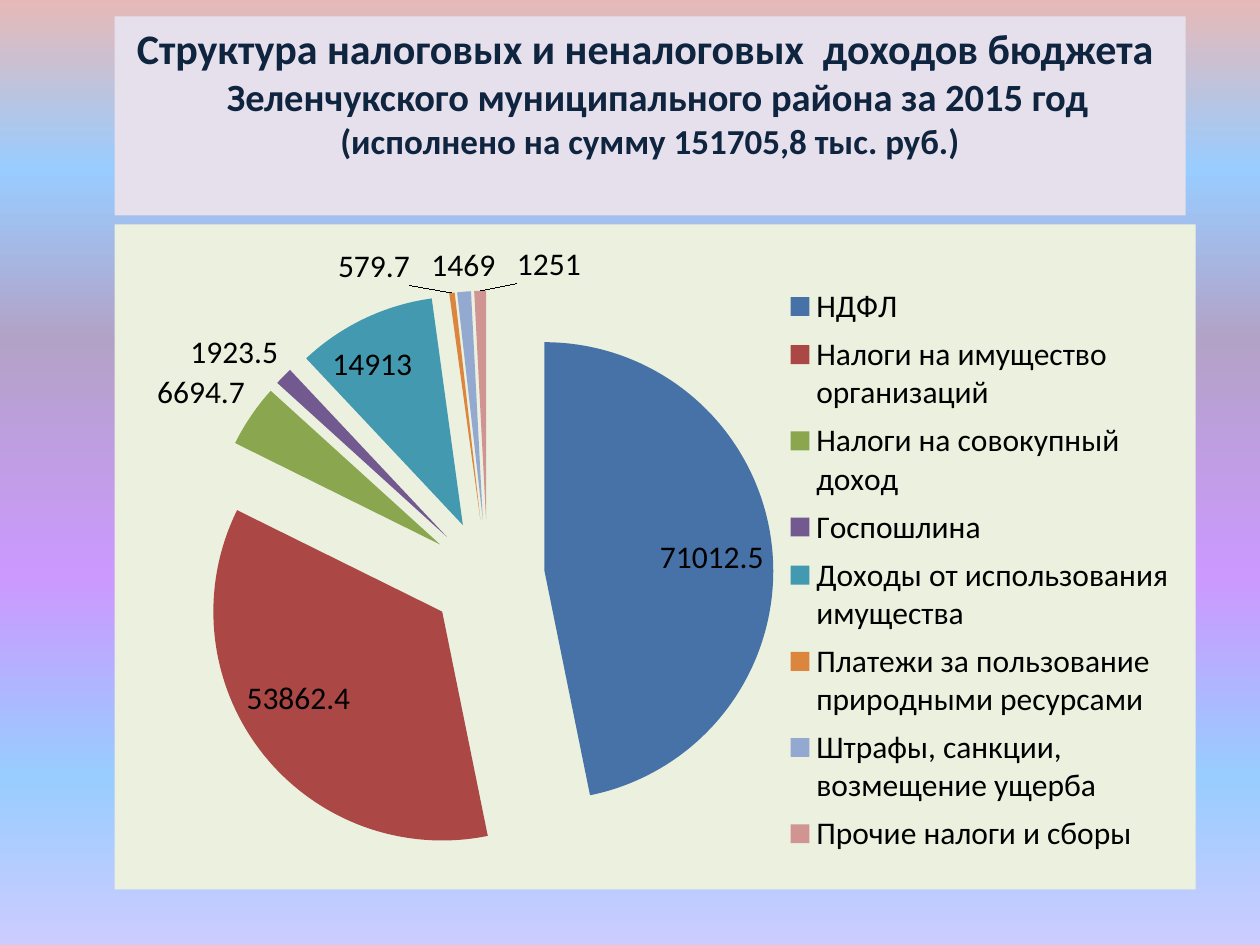
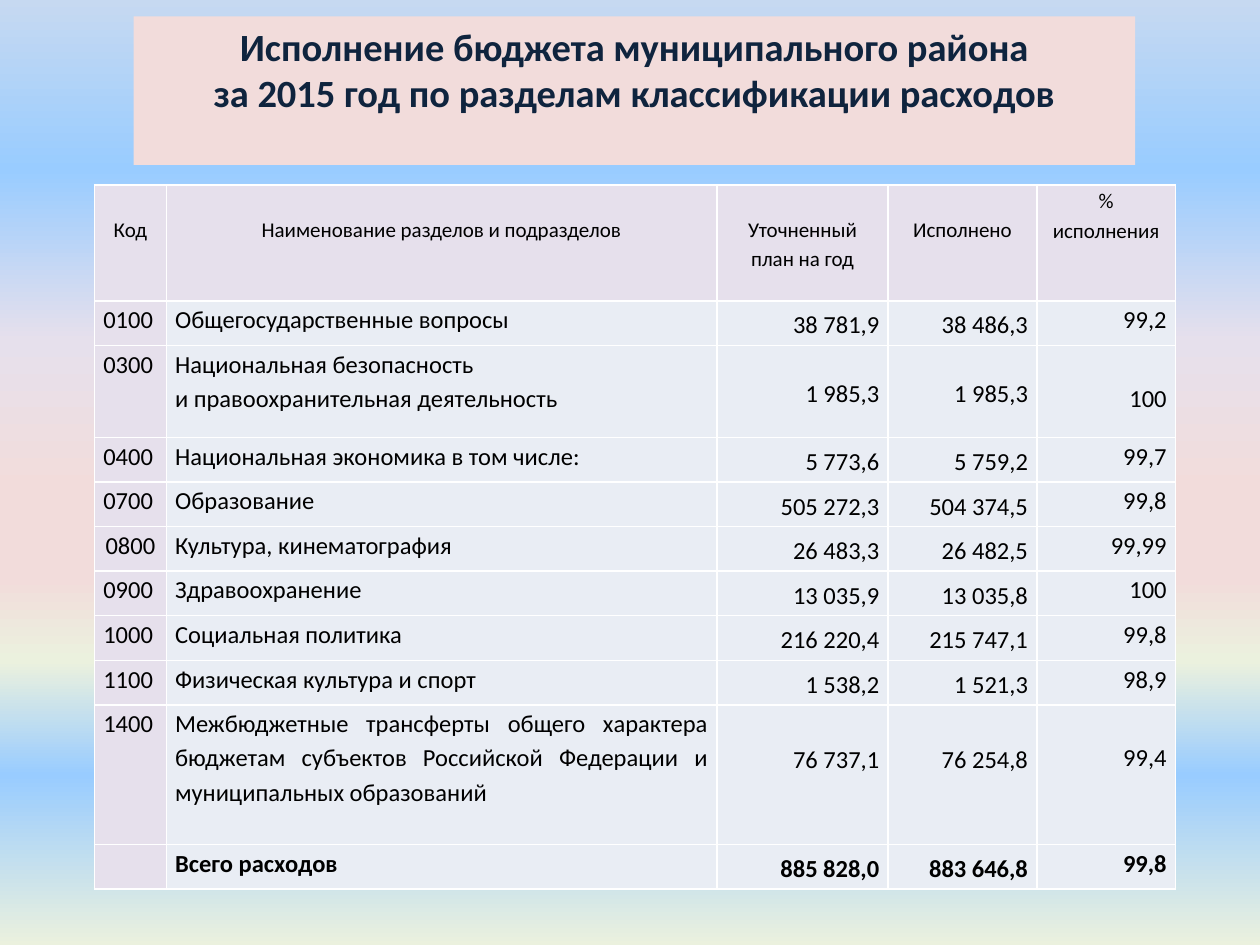
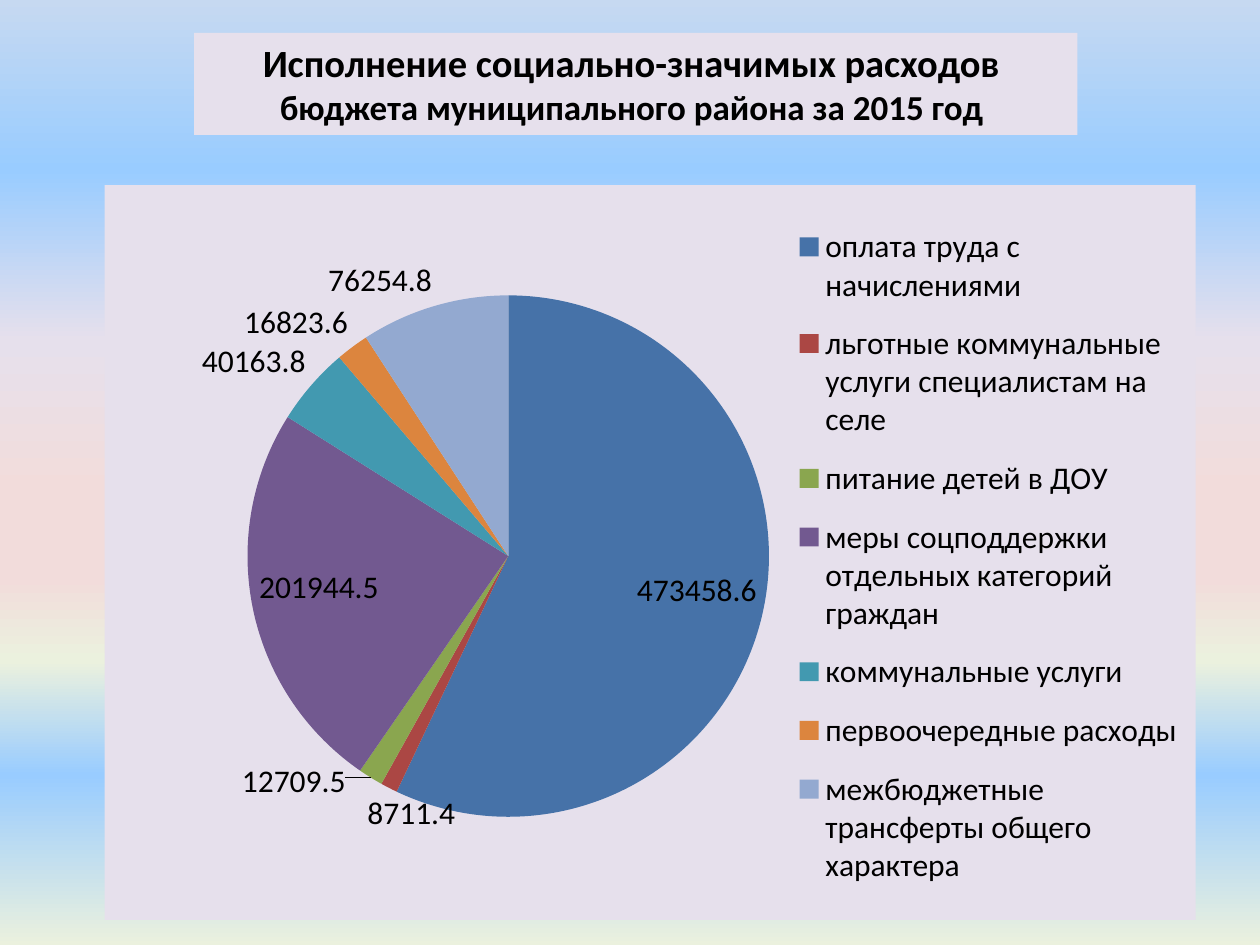
from lxml.etree import SubElement
from pptx import Presentation
from pptx.chart.data import CategoryChartData
from pptx.dml.color import RGBColor
from pptx.enum.chart import XL_CHART_TYPE, XL_LABEL_POSITION, XL_LEGEND_POSITION
from pptx.enum.shapes import MSO_SHAPE
from pptx.enum.text import MSO_ANCHOR, PP_ALIGN
from pptx.oxml import parse_xml
from pptx.oxml.ns import nsdecls, qn
from pptx.util import Emu, Inches, Pt

FONT = "Calibri"
BLACK = RGBColor(0x00, 0x00, 0x00)
WHITE = RGBColor(0xFF, 0xFF, 0xFF)
NAVY = RGBColor(0x0F, 0x24, 0x3E)
LILAC = RGBColor(0xE6, 0xE0, 0xEC)
PINK = RGBColor(0xF2, 0xDC, 0xDB)
GREEN = RGBColor(0xEB, 0xF1, 0xDE)
CELL = RGBColor(0xE9, 0xED, 0xF4)
SKY = RGBColor(0x99, 0xCC, 0xFF)
SLICES = [
    RGBColor(0x46, 0x72, 0xA8), RGBColor(0xAB, 0x47, 0x44),
    RGBColor(0x8A, 0xA6, 0x4F), RGBColor(0x72, 0x59, 0x90),
    RGBColor(0x42, 0x99, 0xB0), RGBColor(0xDC, 0x85, 0x3E),
    RGBColor(0x93, 0xA9, 0xD0), RGBColor(0xD0, 0x94, 0x93),
]

# Backgrounds: position in percent, colour
VIVID = [(0, RGBColor(0xE6, 0xB9, 0xB8)), (18, SKY), (36, RGBColor(0xB3, 0xA2, 0xC7)),
         (61, RGBColor(0xCC, 0x99, 0xFF)), (82, SKY), (100, RGBColor(0xCC, 0xCC, 0xFF))]
PASTEL = [(0, RGBColor(0xC6, 0xD9, 0xF1)), (18, SKY), (36, LILAC), (52, PINK),
          (61, PINK), (70, GREEN), (82, SKY), (100, GREEN)]

INCOME = [
    ("НДФЛ", 71012.5),
    ("Налоги на имущество организаций", 53862.4),
    ("Налоги на совокупный доход", 6694.7),
    ("Госпошлина", 1923.5),
    ("Доходы от использования имущества", 14913),
    ("Платежи за пользование природными ресурсами", 579.7),
    ("Штрафы, санкции, возмещение ущерба", 1469),
    ("Прочие налоги и сборы", 1251),
]
SOCIAL = [
    ("оплата труда с начислениями", 473458.6),
    ("льготные коммунальные услуги специалистам на селе", 8711.4),
    ("питание детей в ДОУ", 12709.5),
    ("меры соцподдержки отдельных категорий граждан", 201944.5),
    ("коммунальные услуги", 40163.8),
    ("первоочередные расходы", 16823.6),
    ("межбюджетные трансферты общего характера", 76254.8),
]
EXPENSES = [
    ("Код", "Наименование разделов и подразделов", "Уточненный план на год",
     "Исполнено", "%\nисполнения"),
    ("0100", "Общегосударственные вопросы", "38 781,9", "38 486,3", "99,2"),
    ("0300", "Национальная безопасность\nи правоохранительная деятельность",
     "1 985,3", "1 985,3", "100"),
    ("0400", "Национальная экономика в том числе:", "5 773,6", "5 759,2", "99,7"),
    ("0700", "Образование", "505 272,3", "504 374,5", "99,8"),
    ("0800", "Культура, кинематография", "26 483,3", "26 482,5", "99,99"),
    ("0900", "Здравоохранение", "13 035,9", "13 035,8", "100"),
    ("1000", "Социальная политика", "216 220,4", "215 747,1", "99,8"),
    ("1100", "Физическая культура и спорт", "1 538,2", "1 521,3", "98,9"),
    ("1400", "Межбюджетные трансферты общего характера бюджетам субъектов "
     "Российской Федерации и муниципальных образований", "76 737,1", "76 254,8", "99,4"),
    ("", "Всего расходов", "885 828,0", "883 646,8", "99,8"),
]
COL_WEIGHTS = [57, 437, 136, 118, 110]
ROW_WEIGHTS = [92, 35.4, 73] + [35.4] * 6 + [111, 35.4]
COL_ALIGN = [PP_ALIGN.LEFT, PP_ALIGN.JUSTIFY] + [PP_ALIGN.RIGHT] * 3
# Cells whose text is pushed off by one line: (row, column) -> margin
LINE_MARGINS = {
    **{(0, c): {"margin_bottom": Inches(0.23)} for c in (0, 1, 3)},
    **{(9, c): {"margin_bottom": Inches(0.27)} for c in (2, 3)},
    **{(r, 4): {"margin_top": Inches(0.27)} for r in (2, 9)},
}


def set_all(obj, **values):
    for name, value in values.items():
        setattr(obj, name, value)


def set_font(font, size, color=BLACK, bold=False):
    set_all(font, name=FONT, size=Pt(size), bold=bold)
    font.color.rgb = color


def add_slide(prs, stops):
    s = prs.slides.add_slide(prs.slide_layouts[6])
    fill = s.background.fill
    fill.gradient()
    grad = s.background._cSld.find(".//" + qn("a:gradFill"))
    for child in list(grad):
        grad.remove(child)
    gs_list = SubElement(grad, qn("a:gsLst"))
    for pos, color in stops:
        gs = SubElement(gs_list, qn("a:gs"), pos=str(pos * 1000))
        SubElement(gs, qn("a:srgbClr"), val=str(color))
    SubElement(grad, qn("a:lin"), ang="5400000", scaled="0")
    return s


def percent_box(prs, left, top, width, height):
    w, h = prs.slide_width / 100, prs.slide_height / 100
    return [Emu(round(v)) for v in (left * w, top * h, width * w, height * h)]


def add_title(s, box, fill, color, lines):
    """Each line is (text, size, left indent in inches)."""
    sp = s.shapes.add_shape(MSO_SHAPE.RECTANGLE, *box)
    sp.shadow.inherit = False
    sp.fill.solid()
    sp.fill.fore_color.rgb = fill
    sp.line.fill.background()
    tf = sp.text_frame
    set_all(tf, word_wrap=True, vertical_anchor=MSO_ANCHOR.TOP)
    for i, (text, size, indent) in enumerate(lines):
        p = tf.add_paragraph() if i else tf.paragraphs[0]
        p.alignment = PP_ALIGN.CENTER
        if indent:
            p._p.get_or_add_pPr().set("marL", str(Inches(indent)))
        r = p.add_run()
        r.text = text
        set_font(r.font, size, color, bold=True)


def manual_layout(x, y, w, h, inner=False):
    target = '<c:layoutTarget val="inner"/>' if inner else ""
    return parse_xml(
        f'<c:layout {nsdecls("c")}><c:manualLayout>{target}'
        '<c:xMode val="edge"/><c:yMode val="edge"/>'
        f'<c:x val="{x}"/><c:y val="{y}"/><c:w val="{w}"/><c:h val="{h}"/>'
        '</c:manualLayout></c:layout>')


def set_layout(element, layout, after=None):
    for old in element.findall(qn("c:layout")):
        element.remove(old)
    if after is None:
        element.insert(0, layout)
    else:
        after.addnext(layout)


def add_pie(s, box, items, fill, plot_box, legend_box, explosion=0):
    """Plot and legend boxes are shares of the chart box."""
    data = CategoryChartData()
    data.categories = [name for name, _ in items]
    data.add_series("Series 1", [value for _, value in items])
    chart = s.shapes.add_chart(XL_CHART_TYPE.PIE, *box, data).chart
    chart.has_title = False
    set_font(chart.font, 18)
    space = chart._chartSpace
    space.find(qn("c:chart")).addnext(parse_xml(
        f'<c:spPr {nsdecls("c", "a")}><a:solidFill><a:srgbClr val="{fill}"/></a:solidFill>'
        '<a:ln><a:noFill/></a:ln></c:spPr>'))
    set_layout(space.find(".//" + qn("c:plotArea")), manual_layout(*plot_box, inner=True))

    # Legend
    chart.has_legend = True
    legend = chart.legend
    set_all(legend, position=XL_LEGEND_POSITION.RIGHT, include_in_layout=False)
    element = space.find(".//" + qn("c:legend"))
    set_layout(element, manual_layout(*legend_box), element.find(qn("c:legendPos")))
    set_font(legend.font, 18)

    # Slices and labels
    plot = chart.plots[0]
    plot.vary_by_categories = True
    series = plot.series[0]
    if explosion:
        series._element.find(qn("c:tx")).addnext(
            parse_xml(f'<c:explosion {nsdecls("c")} val="{explosion}"/>'))
    for i, color in enumerate(SLICES[:len(items)]):
        point = series.points[i].format
        point.fill.solid()
        point.fill.fore_color.rgb = color
        point.line.fill.background()
    plot.has_data_labels = True
    labels = plot.data_labels
    set_all(labels, show_value=True, show_percentage=False, number_format="General",
            number_format_is_linked=False, position=XL_LABEL_POSITION.BEST_FIT)
    set_font(labels.font, 18)


def add_borders(cell):
    tc_pr = cell._tc.get_or_add_tcPr()
    for i, side in enumerate(("lnL", "lnR", "lnT", "lnB")):
        tc_pr.insert(i, parse_xml(
            f'<a:{side} {nsdecls("a")} w="12700"><a:solidFill>'
            f'<a:srgbClr val="{WHITE}"/></a:solidFill></a:{side}>'))


def fill_cell(cell, text, row, col):
    header, total = row == 0, row == len(EXPENSES) - 1
    middle = col in (2, 3) or (header and col < 4)
    set_all(cell, margin_left=Inches(0.07), margin_right=Inches(0.07),
            margin_top=0, margin_bottom=0,
            vertical_anchor=MSO_ANCHOR.MIDDLE if middle else MSO_ANCHOR.TOP)
    set_all(cell, **LINE_MARGINS.get((row, col), {}))
    cell.fill.solid()
    cell.fill.fore_color.rgb = LILAC if header or col == 0 else CELL
    add_borders(cell)
    if not text:
        return
    tf = cell.text_frame
    for i, line in enumerate(text.split("\n")):
        p = tf.add_paragraph() if i else tf.paragraphs[0]
        centred = header or text == "0800"
        set_all(p, alignment=PP_ALIGN.CENTER if centred else COL_ALIGN[col],
                line_spacing=1.15)
        r = p.add_run()
        r.text = line
        set_font(r.font, 12 if header else 14, bold=total)


def add_expense_table(s, box):
    table = s.shapes.add_table(len(EXPENSES), len(COL_WEIGHTS), *box).table
    set_all(table, first_row=False, horz_banding=False)
    for column, weight in zip(table.columns, COL_WEIGHTS):
        column.width = Emu(round(box[2] * weight / sum(COL_WEIGHTS)))
    for row, weight in zip(table.rows, ROW_WEIGHTS):
        row.height = Emu(round(box[3] * weight / sum(ROW_WEIGHTS)))
    for i, texts in enumerate(EXPENSES):
        for j, text in enumerate(texts):
            fill_cell(table.cell(i, j), text, i, j)


def main():
    prs = Presentation()
    set_all(prs, slide_width=Inches(10), slide_height=Inches(7.5))

    # Income structure
    s = add_slide(prs, VIVID)
    add_pie(s, percent_box(prs, 9.1, 23.73, 85.8, 70.4), INCOME, GREEN,
            plot_box=(0.08, 0.1, 0.53, 0.86), legend_box=(0.61, 0.08, 0.38, 0.88),
            explosion=25)
    add_title(s, percent_box(prs, 9.1, 1.73, 85, 21.07), LILAC, NAVY, [
        ("Структура налоговых и неналоговых  доходов бюджета ", 24, 0),
        ("Зеленчукского муниципального района за 2015 год", 22, 0.12),
        ("(исполнено на сумму 151705,8 тыс. руб.)", 20, 0)])

    # Expenses by section
    s = add_slide(prs, PASTEL)
    add_expense_table(s, percent_box(prs, 7.5, 19.6, 85.8, 74.53))
    add_title(s, percent_box(prs, 10.6, 1.73, 79.5, 15.73), PINK, NAVY, [
        ("Исполнение бюджета муниципального района", 22, 0),
        ("за 2015 год по разделам классификации расходов", 22, 0)])

    # Social expenses
    s = add_slide(prs, PASTEL)
    add_pie(s, percent_box(prs, 8.3, 19.6, 86.6, 77.73), SOCIAL, LILAC,
            plot_box=(0.13, 0.15, 0.48, 0.71), legend_box=(0.63, 0.03, 0.36, 0.95))
    add_title(s, percent_box(prs, 15.4, 3.47, 70.1, 10.8), LILAC, BLACK, [
        ("Исполнение социально-значимых расходов ", 22, 0),
        ("бюджета муниципального района за 2015 год ", 20, 0)])

    prs.save("out.pptx")


if __name__ == "__main__":
    main()
